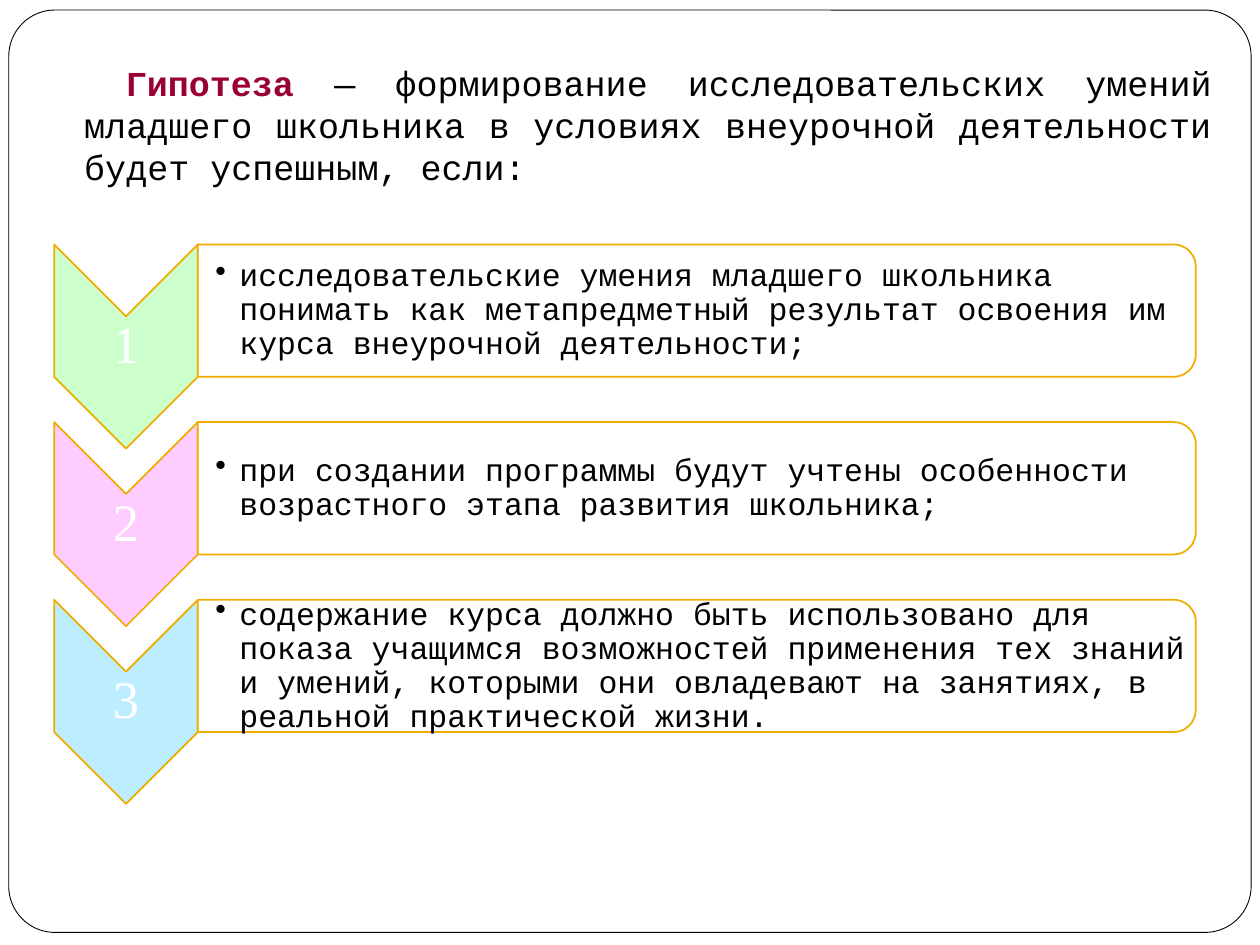
from lxml import etree
from pptx import Presentation
from pptx.dml.color import RGBColor
from pptx.enum.shapes import MSO_SHAPE
from pptx.enum.text import MSO_ANCHOR, PP_ALIGN
from pptx.oxml.ns import qn
from pptx.util import Inches, Pt

ROUND_RECT = MSO_SHAPE.ROUNDED_RECTANGLE
CHEVRON = MSO_SHAPE.CHEVRON
PANEL = MSO_SHAPE.ROUND_2_SAME_RECTANGLE
MIDDLE = MSO_ANCHOR.MIDDLE
CENTER, JUSTIFY = PP_ALIGN.CENTER, PP_ALIGN.JUSTIFY

BLACK = RGBColor(0x00, 0x00, 0x00)
WHITE = RGBColor(0xFF, 0xFF, 0xFF)
CRIMSON = RGBColor(0x99, 0x00, 0x33)
GOLD = RGBColor(0xF0, 0xAD, 0x00)
GREEN = RGBColor(0xCC, 0xFF, 0xCC)
PINK = RGBColor(0xFF, 0xCC, 0xFF)
BLUE = RGBColor(0xBD, 0xEE, 0xFF)

MONO, SERIF = "Courier New", "Times New Roman"

TERM = "Гипотеза "
STATEMENT = (
    "— формирование исследовательских умений младшего школьника в условиях "
    "внеурочной деятельности будет успешным, если:"
)
CONDITIONS = [
    (GREEN, "исследовательские умения младшего школьника понимать как "
            "метапредметный результат освоения им курса внеурочной деятельности;"),
    (PINK, "при создании программы будут учтены особенности возрастного этапа "
           "развития школьника;"),
    (BLUE, "содержание курса должно быть использовано для показа учащимся "
           "возможностей применения тех знаний и умений, которыми они овладевают "
           "на занятиях, в реальной практической жизни."),
]


def add_outline(slide, kind, x, y, w, h, fill, line, width):
    """Add a filled, outlined shape without a shadow."""
    sp = slide.shapes.add_shape(kind, Inches(x), Inches(y), Inches(w), Inches(h))
    sp.shadow.inherit = False
    sp.fill.solid()
    sp.fill.fore_color.rgb = fill
    sp.line.color.rgb = line
    sp.line.width = Pt(width)
    return sp


def add_turned(slide, kind, x, y, w, h, fill):
    """Add a shape turned by a quarter that covers the given box."""
    sp = add_outline(slide, kind, x + (w - h) / 2, y + (h - w) / 2, h, w, fill, GOLD, 1)
    sp.rotation = 90
    return sp


def add_text(slide, x, y, w, h, margins=(0.1, 0.05, 0.1, 0.05)):
    """Add a wrapping text box and return its frame."""
    tf = slide.shapes.add_textbox(Inches(x), Inches(y), Inches(w), Inches(h)).text_frame
    tf.word_wrap = True
    tf.margin_left, tf.margin_top, tf.margin_right, tf.margin_bottom = map(Inches, margins)
    return tf


def set_font(font, name, size, color):
    """Set the face, size and colour of a font."""
    font.name = name
    font.size = Pt(size)
    font.color.rgb = color


def set_indent(p, margin, first):
    """Set the left margin and first-line indent of a paragraph."""
    pPr = p._p.get_or_add_pPr()
    pPr.set("marL", str(Inches(margin)))
    pPr.set("indent", str(Inches(first)))
    return pPr


def add_hypothesis(slide, x, y, w, h):
    """Place the justified opening statement."""
    p = add_text(slide, x, y, w, h).paragraphs[0]
    p.alignment = JUSTIFY
    p.space_before = Pt(5.8)
    set_indent(p, 0.3, 0.33)
    for text, color, bold in ((TERM, CRIMSON, True), (STATEMENT, BLACK, False)):
        r = p.add_run()
        r.text = text
        set_font(r.font, MONO, 20, color)
        r.font.bold = bold


def add_condition(slide, x, y, w, h, number, color, text):
    """Place one numbered chevron and its panel."""
    arrow_w, arrow_h = 1.14, 1.62
    add_turned(slide, CHEVRON, x, y, arrow_w, arrow_h, color)
    tf = add_text(slide, x, y + arrow_w / 2, arrow_w, arrow_h - arrow_w, (0.02,) * 4)
    tf.vertical_anchor = MIDDLE
    p = tf.paragraphs[0]
    p.text = str(number)
    p.alignment = CENTER
    p.line_spacing = 0.9
    set_font(p.font, SERIF, 30, WHITE)

    panel_x, panel_w = x + arrow_w, w - arrow_w
    sp = add_turned(slide, PANEL, panel_x, y, panel_w, h, WHITE)
    srgb = sp.fill._xPr.find(qn("a:solidFill"))[0]
    etree.SubElement(srgb, qn("a:alpha"), val="90000")
    tf = add_text(slide, panel_x, y + 0.05, panel_w - 0.05, h - 0.1,
                  (0.14, 0.01, 0.01, 0.01))
    tf.vertical_anchor = MIDDLE
    p = tf.paragraphs[0]
    p.text = text
    p.line_spacing = 0.9
    set_font(p.font, MONO, 18, BLACK)
    pPr = set_indent(p, 0.19, -0.19)
    bullet = etree.Element(qn("a:buChar"), char="•")
    pPr.insert_element_before(bullet, "a:tabLst", "a:defRPr", "a:extLst")


def add_conditions(slide, x, y, w, pitch):
    """Stack the conditions at an equal pitch."""
    for i, (color, text) in enumerate(CONDITIONS):
        add_condition(slide, x, y + i * pitch, w, 1.05, i + 1, color, text)


def main():
    """Build and save the slide."""
    prs = Presentation()
    prs.slide_width, prs.slide_height = Inches(10), Inches(7.5)
    slide = prs.slides.add_slide(prs.slide_layouts[6])
    frame = add_outline(slide, ROUND_RECT, 0.07, 0.08, 9.86, 7.32, WHITE, BLACK, 0.5)
    frame.adjustments[0] = 0.05
    add_hypothesis(slide, 0.27, 0.44, 9.45, 5.28)
    add_conditions(slide, 0.43, 1.94, 9.06, 1.41)
    prs.save("out.pptx")


if __name__ == "__main__":
    main()
